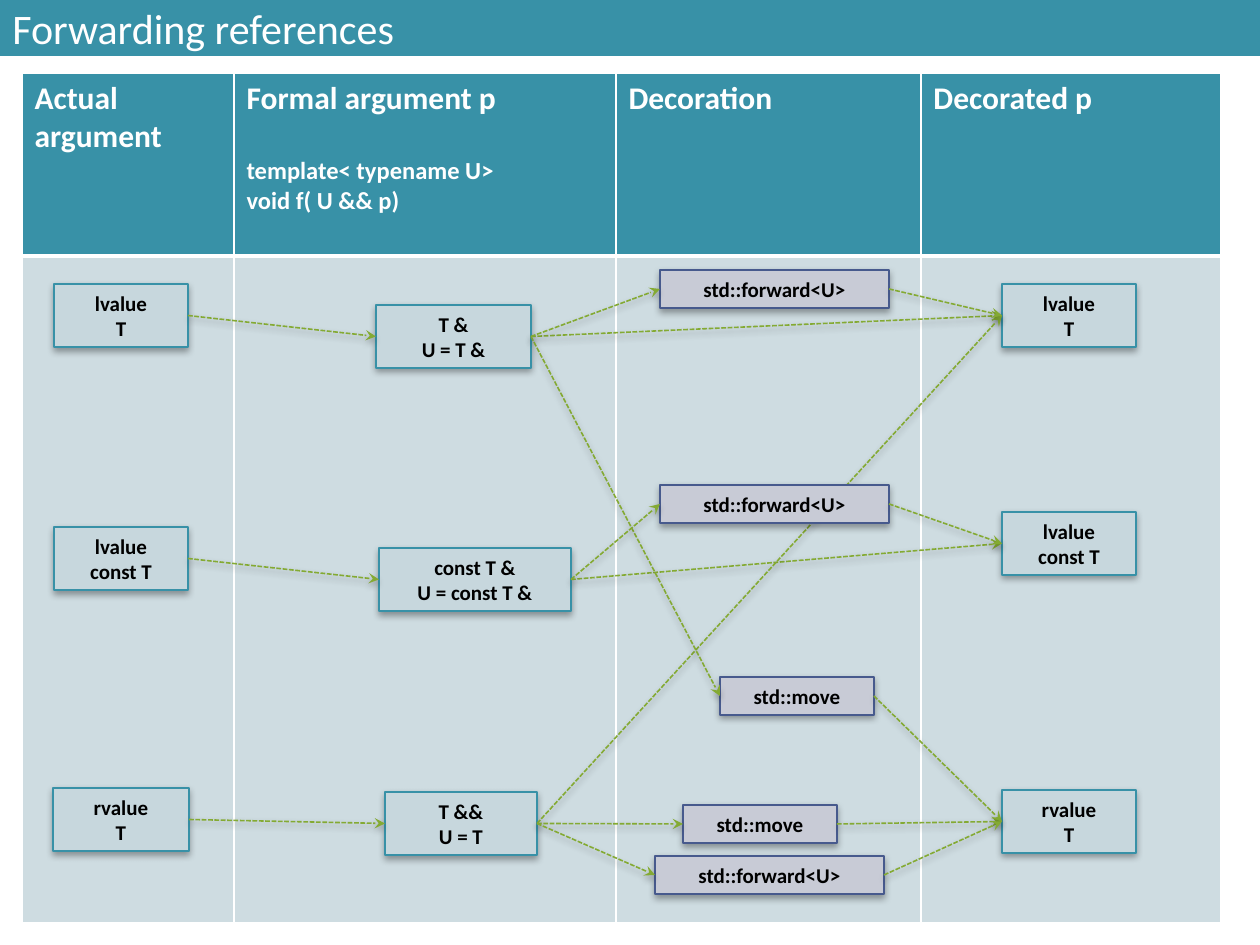
from pptx import Presentation
from pptx.dml.color import RGBColor
from pptx.enum.dml import MSO_LINE
from pptx.enum.shapes import MSO_CONNECTOR, MSO_SHAPE
from pptx.enum.text import MSO_ANCHOR, PP_ALIGN
from pptx.oxml import parse_xml
from pptx.oxml.ns import nsdecls
from pptx.util import Emu, Pt

EMU_PER_PX = 914400 / 126
TEAL = RGBColor(0x38, 0x91, 0xA7)
VALUE_FILL = RGBColor(0xC7, 0xD7, 0xDD)
DECORATION_FILL = RGBColor(0xC8, 0xCB, 0xD6)
DECORATION_EDGE = RGBColor(0x47, 0x5A, 0x8D)
BODY_FILL = RGBColor(0xCE, 0xDC, 0xE1)
GREEN = RGBColor(0x84, 0xAA, 0x33)
WHITE = RGBColor(0xFF, 0xFF, 0xFF)
BLACK = RGBColor(0x00, 0x00, 0x00)
LEFT_SITE, RIGHT_SITE = 1, 3


def px(length):
    return Emu(round(length * EMU_PER_PX))


class SlideBuilder:
    font_name = "Calibri"

    def __init__(self, slide):
        self.slide = slide

    def style(self, paragraph, size, color, bold=True):
        font = paragraph.font
        font.name, font.size, font.bold = self.font_name, Pt(size), bold
        font.color.rgb = color

    def shadow(self, shape):
        shape._element.spPr.append(parse_xml(
            f'<a:effectLst {nsdecls("a")}>'
            f'<a:outerShdw blurRad="{Pt(4)}" dist="{Pt(2)}" dir="5400000" rotWithShape="0">'
            '<a:srgbClr val="000000"><a:alpha val="35000"/></a:srgbClr>'
            '</a:outerShdw></a:effectLst>'))

    def rectangle(self, left, top, width, height, fill):
        shape = self.slide.shapes.add_shape(
            MSO_SHAPE.RECTANGLE, px(left), px(top), px(width), px(height))
        shape.fill.solid()
        shape.fill.fore_color.rgb = fill
        return shape

    def title(self, text, width, height):
        bar = self.rectangle(0, 0, width, height, TEAL)
        bar.shadow.inherit = False
        bar.line.fill.background()
        bar.text_frame.text = text
        bar.text_frame.vertical_anchor = MSO_ANCHOR.MIDDLE
        heading = bar.text_frame.paragraphs[0]
        heading.alignment = PP_ALIGN.LEFT
        self.style(heading, 24, WHITE, bold=False)

    def box(self, text, left, top, width, height, fill, edge):
        box = self.rectangle(left, top, width, height, fill)
        box.line.color.rgb = edge
        box.line.width = Pt(0.75)
        self.shadow(box)
        frame = box.text_frame
        frame.text = text
        frame.word_wrap = True
        frame.vertical_anchor = MSO_ANCHOR.TOP
        for paragraph in frame.paragraphs:
            paragraph.alignment = PP_ALIGN.CENTER
            self.style(paragraph, 12, BLACK)
        return box

    def value(self, text, left, top, width):
        return self.box(text, left, top, width, 63, VALUE_FILL, TEAL)

    def decoration(self, text, left, top, width):
        return self.box(text, left, top, width, 38, DECORATION_FILL, DECORATION_EDGE)

    def arrow(self, source, target):
        arrow = self.slide.shapes.add_connector(MSO_CONNECTOR.STRAIGHT, 0, 0, 0, 0)
        arrow.begin_connect(source, RIGHT_SITE)
        arrow.end_connect(target, LEFT_SITE)
        arrow.line.color.rgb = GREEN
        arrow.line.width = Pt(0.9)
        arrow.line.dash_style = MSO_LINE.SQUARE_DOT
        arrow.line._get_or_add_ln().append(
            parse_xml(f'<a:tailEnd {nsdecls("a")} type="stealth"/>'))
        self.shadow(arrow)

    def cell_borders(self, cell, **widths):
        properties = cell._tc.get_or_add_tcPr()
        for index, (side, width) in enumerate(widths.items()):
            properties.insert(index, parse_xml(
                f'<a:ln{side} {nsdecls("a")} w="{Pt(width)}"><a:solidFill>'
                f'<a:srgbClr val="{WHITE}"/></a:solidFill></a:ln{side}>'))

    def table(self, left, top, column_widths, row_heights, headings):
        table = self.slide.shapes.add_table(
            len(row_heights), len(column_widths), px(left), px(top),
            px(sum(column_widths)), px(sum(row_heights))).table
        for row, height in zip(table.rows, row_heights):
            row.height = px(height)
        for index, (width, heading) in enumerate(zip(column_widths, headings)):
            table.columns[index].width = px(width)
            header, body = table.cell(0, index), table.cell(1, index)
            for cell, fill in ((header, TEAL), (body, BODY_FILL)):
                cell.fill.solid()
                cell.fill.fore_color.rgb = fill
            self.cell_borders(header, L=1, R=1, T=1, B=3)
            self.cell_borders(body, L=1, R=1, T=3, B=1)
            header.text = heading
            for line, paragraph in enumerate(header.text_frame.paragraphs):
                self.style(paragraph, 14 if line else 18, WHITE)
                if line == 1:
                    paragraph.space_before = Pt(22)


def main():
    presentation = Presentation()
    presentation.slide_width, presentation.slide_height = px(1260), px(945)
    builder = SlideBuilder(presentation.slides.add_slide(presentation.slide_layouts[6]))

    # Title bar and column table
    builder.title("Forwarding references", 1260, 56)
    builder.table(22, 73, [212, 382, 305, 300], [183, 667], [
        "Actual argument",
        "Formal argument p\ntemplate< typename U>\nvoid f( U && p)",
        "Decoration",
        "Decorated p",
    ])

    # Formal arguments
    formal_lvalue = builder.value("T &\nU = T &", 376, 305, 155)
    formal_const = builder.value("const T &\nU = const T &", 379, 548, 192)
    formal_rvalue = builder.value("T &&\nU = T", 385, 792, 152)

    # Actual arguments
    actual_lvalue = builder.value("lvalue\vT", 54, 284, 134)
    actual_const = builder.value("lvalue\vconst T", 54, 527, 134)
    actual_rvalue = builder.value("rvalue\vT", 53, 788, 136)

    # Decorated arguments
    decorated_lvalue = builder.value("lvalue\vT", 1002, 284, 134)
    decorated_const = builder.value("lvalue\vconst T", 1002, 512, 134)
    decorated_rvalue = builder.value("rvalue\vT", 1002, 790, 134)

    # Bindings and undecorated uses, behind the decorations
    for source, target in (
        (actual_lvalue, formal_lvalue),
        (actual_const, formal_const),
        (actual_rvalue, formal_rvalue),
        (formal_lvalue, decorated_lvalue),
        (formal_const, decorated_const),
        (formal_rvalue, decorated_lvalue),
    ):
        builder.arrow(source, target)

    # Decorations, each with an arrow in and an arrow out
    for text, left, top, width, source, target in (
        ("std::move", 683, 805, 154, formal_rvalue, decorated_rvalue),
        ("std::move", 720, 677, 154, formal_lvalue, decorated_rvalue),
        ("std::forward<U>", 660, 270, 229, formal_lvalue, decorated_lvalue),
        ("std::forward<U>", 660, 485, 229, formal_const, decorated_const),
        ("std::forward<U>", 655, 856, 229, formal_rvalue, decorated_rvalue),
    ):
        decoration = builder.decoration(text, left, top, width)
        builder.arrow(source, decoration)
        builder.arrow(decoration, target)

    presentation.save("out.pptx")


if __name__ == "__main__":
    main()
